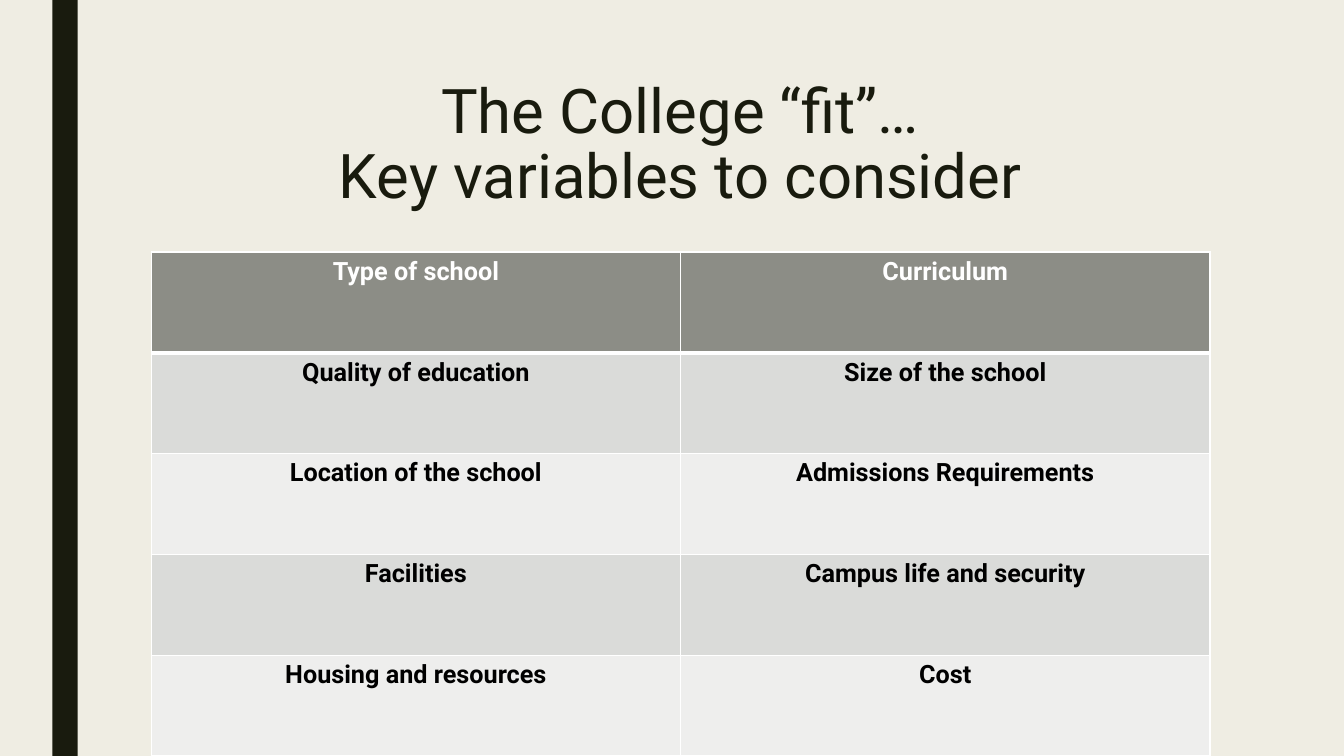
from lxml import etree
from pptx import Presentation
from pptx.dml.color import RGBColor
from pptx.enum.shapes import MSO_SHAPE
from pptx.enum.text import MSO_ANCHOR, PP_ALIGN
from pptx.oxml.ns import qn
from pptx.util import Inches, Pt

RECT = MSO_SHAPE.RECTANGLE
TOP = MSO_ANCHOR.TOP
CENTER = PP_ALIGN.CENTER
FONT = "Roboto"
COLORS = {
    "background": "EFEDE3",
    "dark": "191B0E",
    "header": "8C8D86",
    "odd": "DADBD9",
    "even": "EEEEED",
    "white": "FFFFFF",
    "black": "000000",
}
VARIABLES = [
    ("Type of school", "Curriculum"),
    ("Quality of education", "Size of the school"),
    ("Location of the school", "Admissions Requirements"),
    ("Facilities", "Campus life and security"),
    ("Housing and resources", "Cost"),
]


def rgb(name):
    return RGBColor.from_string(COLORS[name])


def format_paragraph(p, size, color, bold):
    p.alignment = CENTER
    for r in p.runs:
        r.font.name = FONT
        r.font.size = Pt(size)
        r.font.bold = bold
        r.font.color.rgb = rgb(color)


prs = Presentation()
prs.slide_width = Inches(13.33)
prs.slide_height = Inches(7.5)
s = prs.slides.add_slide(prs.slide_layouts[6])
s.background.fill.solid()
s.background.fill.fore_color.rgb = rgb("background")

bar = s.shapes.add_shape(RECT, Inches(0.52), 0, Inches(0.25), Inches(7.5))
bar.shadow.inherit = False
bar.fill.solid()
bar.fill.fore_color.rgb = rgb("dark")
bar.line.fill.background()

title = s.shapes.add_textbox(Inches(1.5), Inches(0.75), Inches(10.5), Inches(1.62))
tf = title.text_frame
tf.word_wrap = True
tf.vertical_anchor = TOP
p = tf.paragraphs[0]
p.text = "The College “fit”…\vKey variables to consider"
p.line_spacing = 0.89
format_paragraph(p, 44, "dark", False)

table = s.shapes.add_table(
    len(VARIABLES), 2, Inches(1.5), Inches(2.5), Inches(10.5), Inches(5)
).table
for i, labels in enumerate(VARIABLES):
    table.rows[i].height = Inches(1)
    fill = "header" if i == 0 else "odd" if i % 2 else "even"
    widths = {"lnL": 1, "lnR": 1, "lnT": 3 if i == 1 else 1, "lnB": 3 if i == 0 else 1}
    for j, label in enumerate(labels):
        cell = table.cell(i, j)
        cell.text_frame.text = label
        format_paragraph(
            cell.text_frame.paragraphs[0], 18, "black" if i else "white", True
        )
        tcPr = cell._tc.get_or_add_tcPr()
        for side, width in widths.items():
            ln = etree.SubElement(tcPr, qn("a:" + side), w=str(Pt(width)))
            solid = etree.SubElement(ln, qn("a:solidFill"))
            etree.SubElement(solid, qn("a:srgbClr"), val=COLORS["white"])
        cell.fill.solid()
        cell.fill.fore_color.rgb = rgb(fill)

prs.save("out.pptx")
